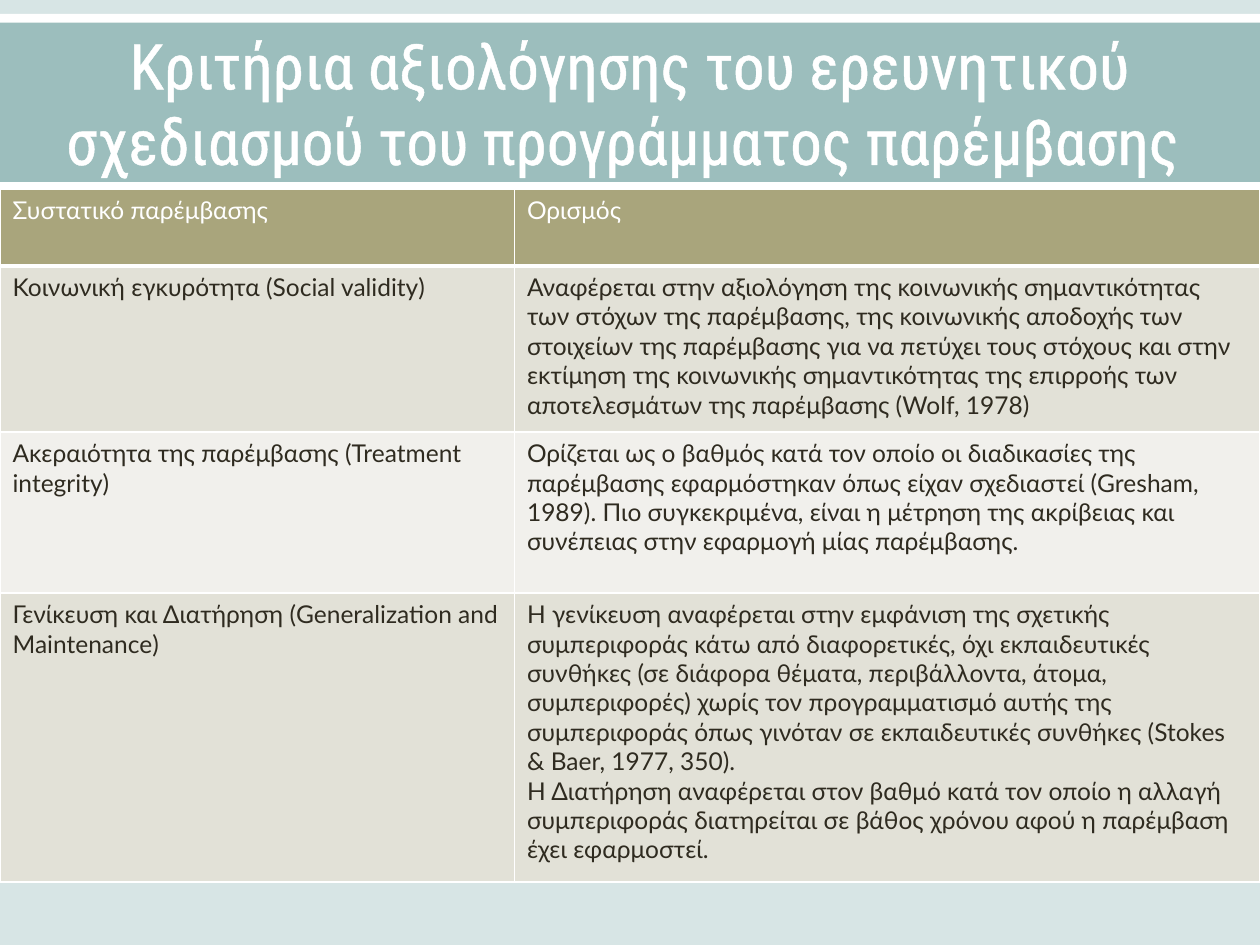
from lxml import etree
from pptx import Presentation
from pptx.dml.color import RGBColor
from pptx.enum import shapes, text
from pptx.oxml.ns import qn
from pptx.util import Pt

COLORS = {
    "background": "D7E5E5",
    "white": "FFFFFF",
    "teal": "9CBEBD",
    "olive": "A9A57C",
    "dark_row": "E2E1D7",
    "light_row": "F1F0EC",
    "body_text": "2F2B20",
}
WIDTH, HEIGHT = 720, 540
TABLE_TOP = 108
COLUMN_WIDTHS = [294, 426]
ROW_HEIGHTS = [44, 95, 92, 165]
BANDS = [(8, 114.5, "white"), (13, 91, "teal"), (TABLE_TOP, 11.5, "olive")]

TITLE = "Κριτήρια αξιολόγησης του ερευνητικού σχεδιασμού του προγράμματος παρέμβασης "
# Each cell is a list of paragraphs.
ROWS = [
    (["Συστατικό παρέμβασης"], ["Ορισμός"]),
    (
        ["Κοινωνική εγκυρότητα (Social validity)"],
        ["Αναφέρεται στην αξιολόγηση της κοινωνικής σημαντικότητας των στόχων της "
         "παρέμβασης, της κοινωνικής αποδοχής των στοιχείων της παρέμβασης για να "
         "πετύχει τους στόχους και στην εκτίμηση της κοινωνικής σημαντικότητας της "
         "επιρροής των αποτελεσμάτων της παρέμβασης (Wolf, 1978)"],
    ),
    (
        ["Ακεραιότητα της παρέμβασης (Treatment integrity)"],
        ["Ορίζεται ως ο βαθμός κατά τον οποίο οι διαδικασίες της παρέμβασης "
         "εφαρμόστηκαν όπως είχαν σχεδιαστεί (Gresham, 1989). Πιο συγκεκριμένα, "
         "είναι η μέτρηση της ακρίβειας και συνέπειας στην εφαρμογή μίας παρέμβασης."],
    ),
    (
        ["Γενίκευση και Διατήρηση (Generalization and Maintenance)"],
        ["Η γενίκευση αναφέρεται στην εμφάνιση της σχετικής συμπεριφοράς κάτω από "
         "διαφορετικές, όχι εκπαιδευτικές συνθήκες (σε διάφορα θέματα, περιβάλλοντα, "
         "άτομα, συμπεριφορές) χωρίς τον προγραμματισμό αυτής της συμπεριφοράς όπως "
         "γινόταν σε εκπαιδευτικές συνθήκες (Stokes & Baer, 1977, 350).",
         "Η Διατήρηση αναφέρεται στον βαθμό κατά τον οποίο η αλλαγή συμπεριφοράς "
         "διατηρείται σε βάθος χρόνου αφού η παρέμβαση έχει εφαρμοστεί."],
    ),
]


def rgb(name):
    return RGBColor.from_string(COLORS[name])


def set_fill(target, color):
    target.fill.solid()
    target.fill.fore_color.rgb = rgb(color)


def add_line(parent, tag, width, color):
    """Append a solid DrawingML line element to parent."""
    line = etree.SubElement(parent, qn(tag), w=str(int(Pt(width))))
    solid = etree.SubElement(line, qn("a:solidFill"))
    etree.SubElement(solid, qn("a:srgbClr"), val=COLORS[color])
    return line


def add_run(paragraph, words, font, size, color):
    run = paragraph.add_run()
    run.text = words
    run.font.name = font
    run.font.size = Pt(size)
    run.font.color.rgb = rgb(color)
    return run


def add_band(slide, top, height, color):
    band = slide.shapes.add_shape(
        shapes.MSO_SHAPE.RECTANGLE, 0, Pt(top), Pt(WIDTH), Pt(height))
    band.shadow.inherit = False
    set_fill(band, color)
    band.line.fill.background()


def add_title(slide):
    title = slide.shapes.title
    title.left, title.top, title.width, title.height = 0, Pt(14.4), Pt(WIDTH), Pt(87.8)
    frame = title.text_frame
    frame.word_wrap = True
    frame.auto_size = text.MSO_AUTO_SIZE.NONE
    frame.vertical_anchor = text.MSO_ANCHOR.MIDDLE
    paragraph = frame.paragraphs[0]
    paragraph.alignment = text.PP_ALIGN.CENTER
    run = add_run(paragraph, TITLE, "Roboto Condensed", 36, "white")
    properties = run.font._element
    properties.insert(0, add_line(properties, "a:ln", 1.1, "white"))
    slide.shapes._spTree.append(title._element)  # in front of the bands


def fill_cell(cell, paragraphs, fill, color, bottom_width):
    properties = cell._tc.get_or_add_tcPr()
    for side in "LRTB":
        add_line(properties, f"a:ln{side}", bottom_width if side == "B" else 1, "white")
    set_fill(cell, fill)
    for index, words in enumerate(paragraphs):
        frame = cell.text_frame
        paragraph = frame.add_paragraph() if index else frame.paragraphs[0]
        add_run(paragraph, words, "Lato", 14, color)


def add_criteria_table(slide):
    table = slide.shapes.add_table(
        len(ROWS), len(COLUMN_WIDTHS), 0, Pt(TABLE_TOP),
        Pt(WIDTH), Pt(sum(ROW_HEIGHTS))).table
    for column, width in zip(table.columns, COLUMN_WIDTHS):
        column.width = Pt(width)
    for index, (row, height, contents) in enumerate(zip(table.rows, ROW_HEIGHTS, ROWS)):
        row.height = Pt(height)
        if index == 0:
            style = ("olive", "white", 3)
        else:
            style = ("dark_row" if index % 2 else "light_row", "body_text", 1)
        for cell, paragraphs in zip(row.cells, contents):
            fill_cell(cell, paragraphs, *style)


def main():
    presentation = Presentation()
    presentation.slide_width, presentation.slide_height = Pt(WIDTH), Pt(HEIGHT)
    slide = presentation.slides.add_slide(presentation.slide_layouts.get_by_name("Title Only"))
    set_fill(slide.background, "background")
    for band in BANDS:
        add_band(slide, *band)
    add_title(slide)
    add_criteria_table(slide)
    presentation.save("out.pptx")


if __name__ == "__main__":
    main()
